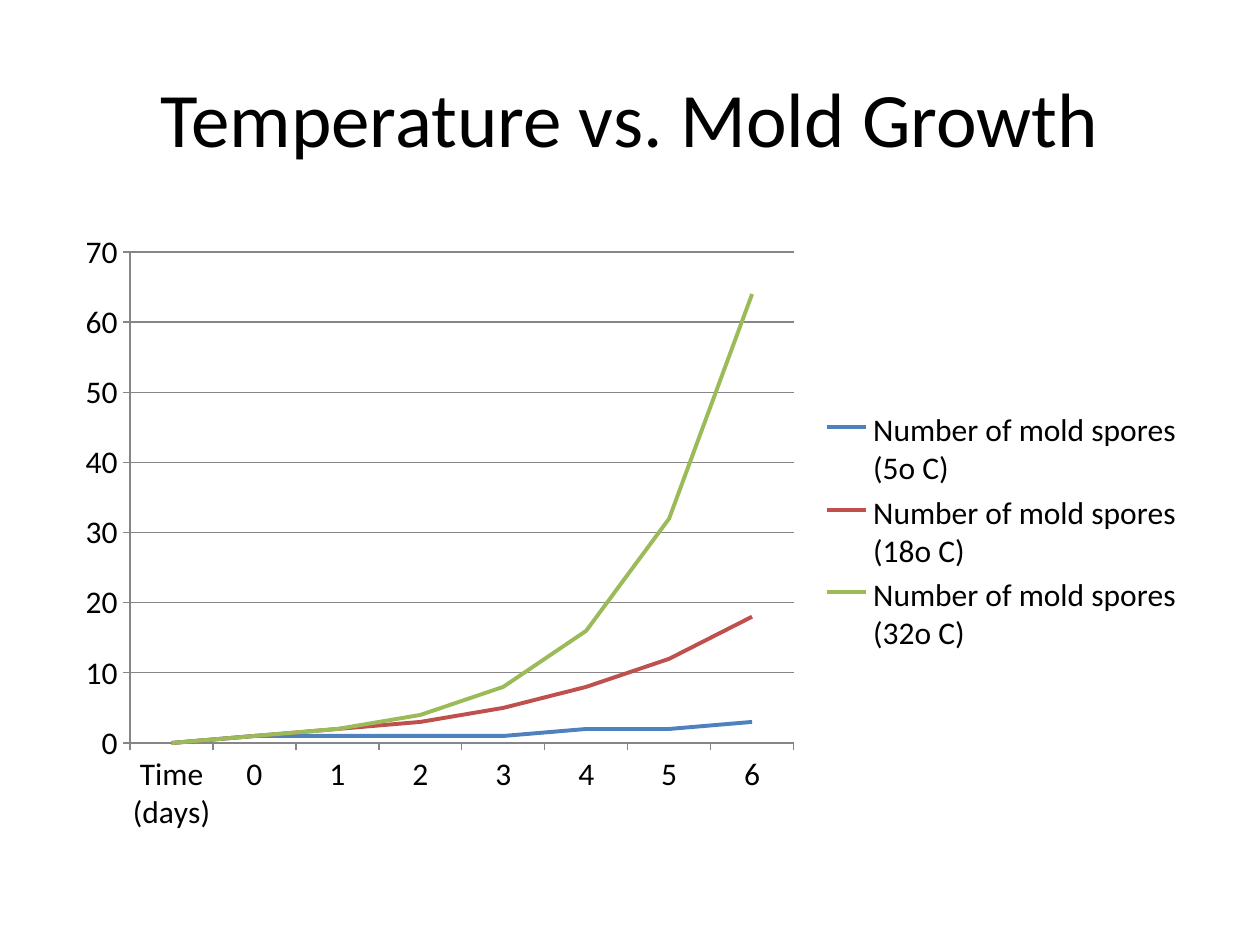
from dataclasses import dataclass

from pptx import Presentation
from pptx.chart.data import CategoryChartData
from pptx.dml.color import RGBColor
from pptx.enum import chart as ch, text as tx
from pptx.util import Pt


@dataclass(frozen=True)
class Theme:
    """Colours, font and sizes of the slide."""
    font: str = "Calibri"
    ink: str = "000000"
    axis: str = "868686"
    spores: tuple = ("4F81BD", "C0504D", "9BBB59")
    title_size: float = 44
    chart_size: float = 18
    axis_width: float = 0.75
    curve_width: float = 2.25


THEME = Theme()
DAYS = ("Time (days)", "0", "1", "2", "3", "4", "5", "6")
SPORES = {
    "5o C": (0, 1, 1, 1, 1, 2, 2, 3),
    "18o C": (0, 1, 2, 3, 5, 8, 12, 18),
    "32o C": (0, 1, 2, 4, 8, 16, 32, 64),
}


def style_font(font, size, color):
    """Give a font the theme typeface, a size and a colour."""
    font.name = THEME.font
    font.size = Pt(size)
    font.color.rgb = RGBColor.from_string(color)


def style_line(line, color, width):
    """Give a line a colour and a width."""
    line.color.rgb = RGBColor.from_string(color)
    line.width = Pt(width)


def add_text(slide, box, wording, *, size, color=THEME.ink,
             align=tx.PP_ALIGN.CENTER, anchor=tx.MSO_ANCHOR.MIDDLE):
    """Place formatted text in a box."""
    frame = slide.shapes.add_textbox(*map(Pt, box)).text_frame
    frame.word_wrap = True
    frame.vertical_anchor = anchor
    paragraph = frame.paragraphs[0]
    paragraph.alignment = align
    run = paragraph.add_run()
    run.text = wording
    style_font(run.font, size, color)


def add_title(slide, box):
    """Place the heading."""
    add_text(slide, box, "Temperature vs. Mold Growth", size=THEME.title_size)


def add_growth_chart(slide, box):
    """Place the line chart of mold spores per day."""
    growth = CategoryChartData()
    growth.categories = DAYS
    for temperature, counts in SPORES.items():
        growth.add_series(f"Number of mold spores ({temperature})", counts)
    chart = slide.shapes.add_chart(
        ch.XL_CHART_TYPE.LINE, *map(Pt, box), growth).chart
    style_font(chart.font, THEME.chart_size, THEME.ink)
    chart.has_title = False
    chart.has_legend = True
    chart.legend.position = ch.XL_LEGEND_POSITION.RIGHT
    chart.legend.include_in_layout = False

    for axis in (chart.category_axis, chart.value_axis):
        axis.major_tick_mark = ch.XL_TICK_MARK.OUTSIDE
        axis.minor_tick_mark = ch.XL_TICK_MARK.NONE
        style_line(axis.format.line, THEME.axis, THEME.axis_width)
    counts_axis = chart.value_axis
    counts_axis.minimum_scale, counts_axis.maximum_scale = 0, 70
    counts_axis.major_unit = 10
    counts_axis.has_major_gridlines = True
    style_line(counts_axis.major_gridlines.format.line,
               THEME.axis, THEME.axis_width)

    plot = chart.plots[0]
    plot.vary_by_categories = False
    for curve, color in zip(plot.series, THEME.spores):
        curve.smooth = False
        curve.marker.style = ch.XL_MARKER_STYLE.NONE
        style_line(curve.format.line, color, THEME.curve_width)


def main():
    """Build and save the slide."""
    deck = Presentation()
    deck.slide_width, deck.slide_height = Pt(720), Pt(540)
    slide = deck.slides.add_slide(deck.slide_layouts[6])
    add_title(slide, (36, 21.6, 648, 90))
    add_growth_chart(slide, (36, 126, 648, 356.4))
    deck.save("out.pptx")


if __name__ == "__main__":
    main()
